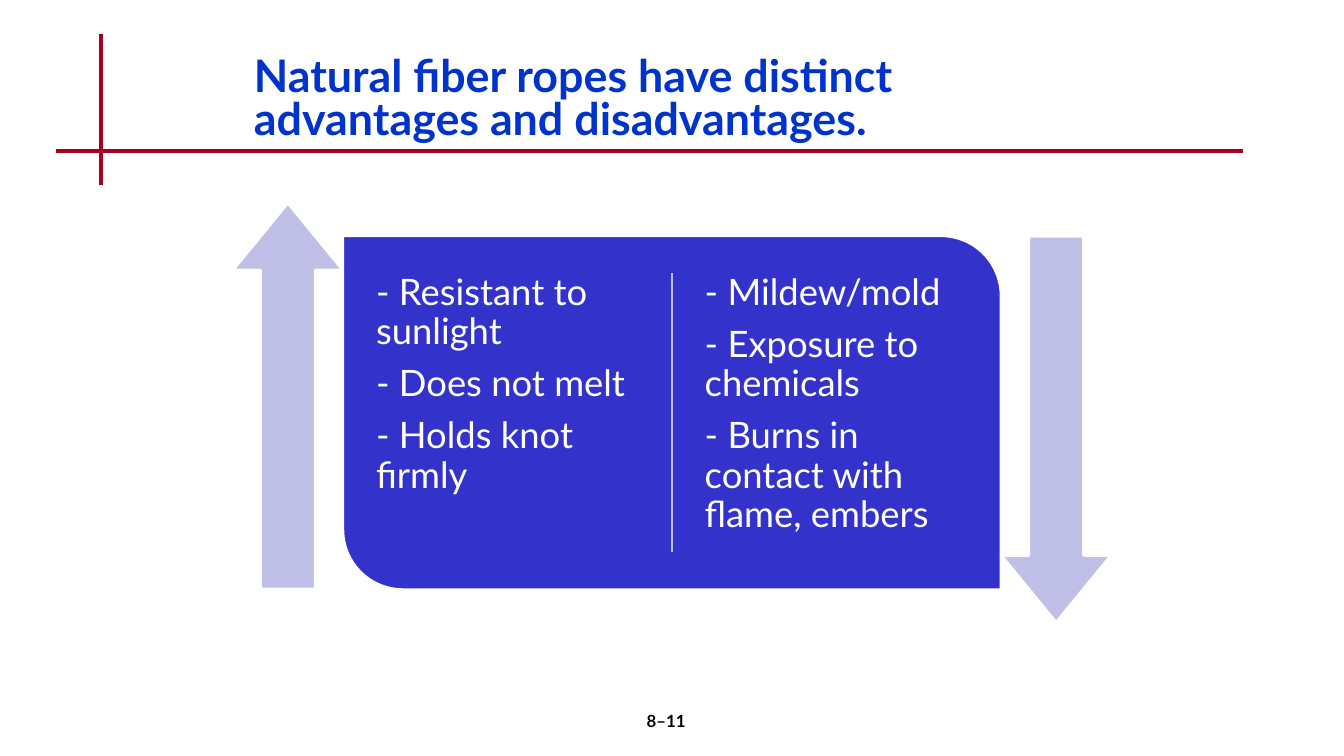
"""Build the slide comparing advantages and disadvantages of natural fiber ropes."""
from lxml import etree
from pptx import Presentation
from pptx.dml.color import RGBColor
from pptx.enum.shapes import MSO_CONNECTOR, MSO_SHAPE
from pptx.enum.text import MSO_ANCHOR, PP_ALIGN
from pptx.oxml.ns import qn
from pptx.util import Cm, Pt

TITLE = "Natural fiber ropes have distinct advantages and disadvantages."
ADVANTAGES = ["- Resistant to sunlight", "- Does not melt", "- Holds knot firmly"]
DISADVANTAGES = ["- Mildew/mold", "- Exposure to chemicals", "- Burns in contact with flame, embers"]
PAGE_NUMBER = "8–11"

COLORS = {"title": "0033CC", "rule": "A50021", "panel": "3333CC",
          "pale": "BFBFE7", "white": "FFFFFF", "black": "000000"}
FONT = "Lato"
STRAIGHT = MSO_CONNECTOR.STRAIGHT
RIGHT_ARROW = MSO_SHAPE.RIGHT_ARROW
DIAGONAL_PANEL = MSO_SHAPE.ROUND_2_DIAG_RECTANGLE
TOP, MIDDLE = MSO_ANCHOR.TOP, MSO_ANCHOR.MIDDLE
LEFT, CENTER = PP_ALIGN.LEFT, PP_ALIGN.CENTER

PANEL_LEFT, PANEL_TOP, PANEL_WIDTH, PANEL_HEIGHT = 8.64, 5.94, 16.59, 8.92
PANEL_CENTER = PANEL_LEFT + PANEL_WIDTH / 2
COLUMN_WIDTH, COLUMN_HEIGHT, COLUMN_GAP = 7.19, 7.57, 1.09
ARROW_LENGTH, ARROW_WIDTH = 9.73, 2.77
ARROW_OFFSET, ARROW_SHIFT = 9.68, 0.42


def color(name):
    return RGBColor.from_string(COLORS[name])


def write_text(shape, lines, size, fill, bold=False, align=LEFT, anchor=TOP,
               spacing=1.0, after=0, insets=(0.25, 0.13)):
    frame = shape.text_frame
    frame.word_wrap = True
    frame.vertical_anchor = anchor
    frame.margin_left = frame.margin_right = Cm(insets[0])
    frame.margin_top = frame.margin_bottom = Cm(insets[1])
    for index, line in enumerate(lines):
        paragraph = frame.add_paragraph() if index else frame.paragraphs[0]
        paragraph.alignment = align
        paragraph.line_spacing = spacing
        paragraph.space_before = Pt(0)
        paragraph.space_after = Pt(after)
        run = paragraph.add_run()
        run.text = line
        run.font.name = FONT
        run.font.size = Pt(size)
        run.font.bold = bold
        run.font.color.rgb = color(fill)


def add_line(slide, start, end, fill, width):
    line = slide.shapes.add_connector(STRAIGHT, *map(Cm, start + end))
    line.line.color.rgb = color(fill)
    line.line.width = Pt(width)
    etree.SubElement(line._element.spPr, qn("a:effectLst"))


def add_block(slide, kind, box, fill, adjustments, rotation=0):
    shape = slide.shapes.add_shape(kind, *map(Cm, box))
    shape.shadow.inherit = False
    shape.fill.solid()
    shape.fill.fore_color.rgb = color(fill)
    shape.line.color.rgb = color("white")
    shape.line.width = Pt(2)
    shape.rotation = rotation
    for index, value in enumerate(adjustments):
        shape.adjustments[index] = value


def main():
    presentation = Presentation()
    presentation.slide_width, presentation.slide_height = Cm(33.87), Cm(19.05)
    slide = presentation.slides.add_slide(presentation.slide_layouts[5])

    add_line(slide, (2.54, 0.85), (2.54, 4.66), "rule", 3)
    add_line(slide, (1.42, 3.81), (31.33, 3.81), "rule", 3)

    title = slide.shapes.title
    title.left, title.top, title.width, title.height = map(Cm, (6.15, 1.27, 21.59, 2.54))
    write_text(title, [TITLE], 32, "title", bold=True, anchor=MIDDLE, spacing=0.8)

    add_block(slide, DIAGONAL_PANEL, (PANEL_LEFT, PANEL_TOP, PANEL_WIDTH, PANEL_HEIGHT),
              "panel", (0, 0.17))
    middle = PANEL_TOP + PANEL_HEIGHT / 2
    add_line(slide, (PANEL_CENTER, middle - 3.51), (PANEL_CENTER, middle + 3.51), "pale", 2)

    for side, lines, rotation in ((-1, ADVANTAGES, 270), (1, DISADVANTAGES, 90)):
        column_left = PANEL_CENTER + side * (COLUMN_WIDTH + COLUMN_GAP) / 2 - COLUMN_WIDTH / 2
        column = slide.shapes.add_textbox(Cm(column_left), Cm(6.63), Cm(COLUMN_WIDTH), Cm(COLUMN_HEIGHT))
        write_text(column, lines, 26, "white", spacing=0.9, after=9.1, insets=(0.28, 0.28))
        arrow_left = PANEL_CENTER + side * ARROW_OFFSET - ARROW_LENGTH / 2
        arrow_top = middle + side * ARROW_SHIFT - ARROW_WIDTH / 2
        add_block(slide, RIGHT_ARROW, (arrow_left, arrow_top, ARROW_LENGTH, ARROW_WIDTH),
                  "pale", (0.5, 0.61), rotation)

    number = slide.shapes.add_textbox(Cm(13.26), Cm(17.78), Cm(7.06), Cm(1.27))
    write_text(number, [PAGE_NUMBER], 12, "black", bold=True, align=CENTER)

    presentation.save("out.pptx")


if __name__ == "__main__":
    main()
